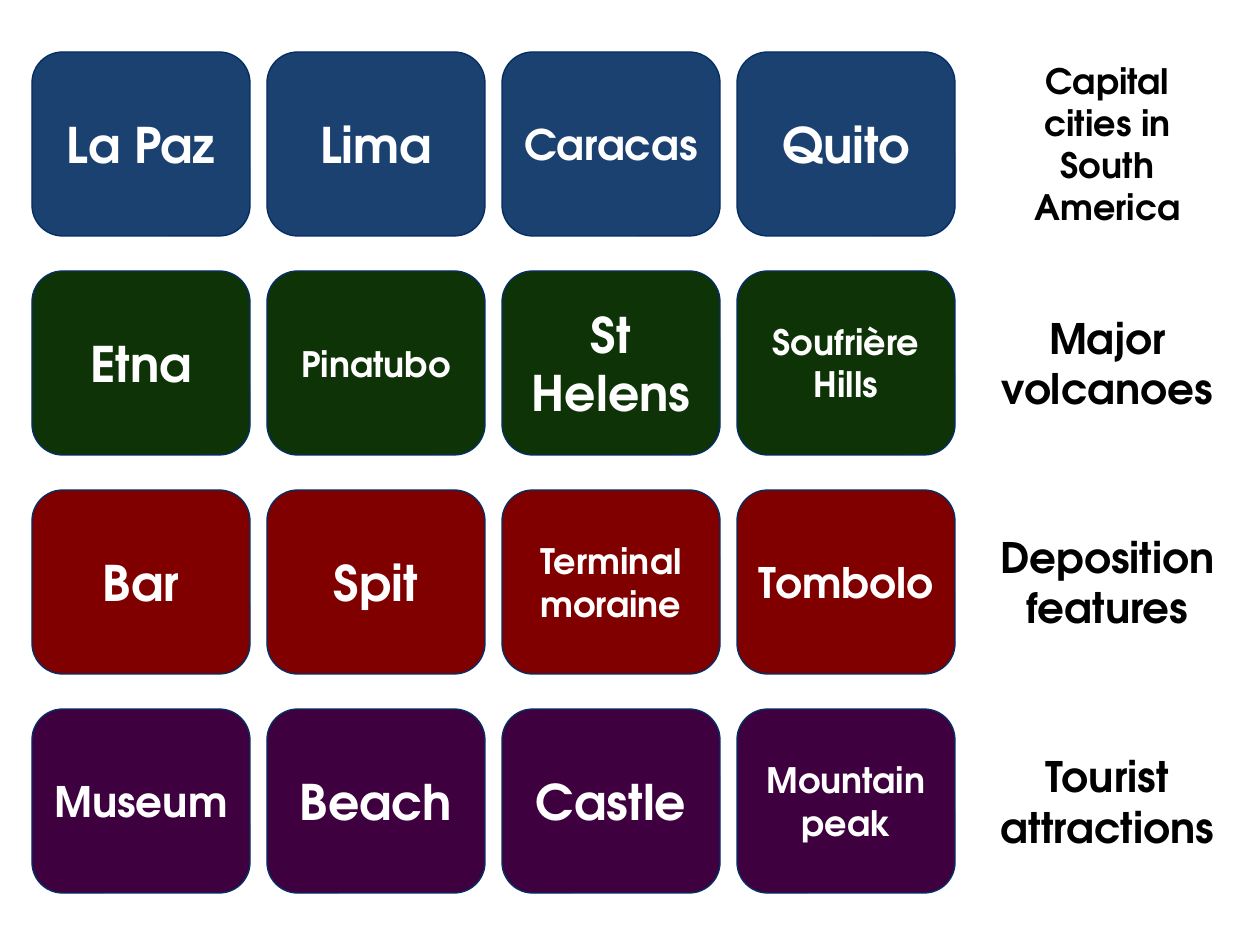
from pptx import Presentation
from pptx.dml.color import RGBColor
from pptx.enum.shapes import MSO_SHAPE
from pptx.enum.text import MSO_ANCHOR, PP_ALIGN
from pptx.util import Pt

ROUNDED = MSO_SHAPE.ROUNDED_RECTANGLE
MIDDLE = MSO_ANCHOR.MIDDLE
CENTER = PP_ALIGN.CENTER

EMU_PER_PX = 914400 / 126
COLORS = {
    "blue": "1B4171",
    "green": "0E3306",
    "red": "800000",
    "purple": "3F003F",
    "border": "052E65",
    "white": "FFFFFF",
    "black": "000000",
}

LEFT, TOP = 32, 52
CARD_W, CARD_H = 218, 184
COL_STEP, ROW_STEP = 235, 219
LABEL_LEFT, LABEL_W = 977, 261

GROUPS = [
    ("blue", [("La Paz", 28), ("Lima", 28), ("Caracas", 24), ("Quito", 28)],
     ("Capital cities in South America", 20)),
    ("green", [("Etna", 28), ("Pinatubo", 20), ("St Helens", 28), ("Soufrière Hills", 20)],
     ("Major volcanoes", 24)),
    ("red", [("Bar", 28), ("Spit", 28), ("Terminal moraine", 20), ("Tombolo", 24)],
     ("Deposition features", 24)),
    ("purple", [("Museum", 24), ("Beach", 28), ("Castle", 28), ("Mountain peak", 20)],
     ("Tourist attractions", 24)),
]


def px(n):
    return round(n * EMU_PER_PX)


def rgb(name):
    return RGBColor.from_string(COLORS[name])


class Board:
    font = "TeX Gyre Adventor"
    line_width = Pt(0.79)
    inset = px(12)

    def __init__(self, slide):
        self.s = slide

    def box(self, x, y, w, text, size, color):
        sp = self.s.shapes.add_shape(ROUNDED, px(x), px(y), px(w), px(CARD_H))
        sp.shadow.inherit = False
        tf = sp.text_frame
        tf.word_wrap = True
        tf.vertical_anchor = MIDDLE
        tf.margin_left = tf.margin_right = self.inset
        p = tf.paragraphs[0]
        p.text = text
        p.alignment = CENTER
        p.font.name = self.font
        p.font.size = Pt(size)
        p.font.bold = True
        p.font.color.rgb = rgb(color)
        return sp

    def card(self, x, y, text, size, fill):
        sp = self.box(x, y, CARD_W, text, size, "white")
        sp.fill.solid()
        sp.fill.fore_color.rgb = rgb(fill)
        sp.line.color.rgb = rgb("border")
        sp.line.width = self.line_width

    def label(self, x, y, text, size):
        sp = self.box(x, y, LABEL_W, text, size, "black")
        sp.fill.background()
        sp.line.fill.background()


def main():
    prs = Presentation()
    prs.slide_width, prs.slide_height = px(1260), px(945)
    board = Board(prs.slides.add_slide(prs.slide_layouts[6]))
    for row, (fill, cards, label) in enumerate(GROUPS):
        y = TOP + row * ROW_STEP
        for col, (text, size) in enumerate(cards):
            board.card(LEFT + col * COL_STEP, y, text, size, fill)
        board.label(LABEL_LEFT, y, *label)
    prs.save("out.pptx")


if __name__ == "__main__":
    main()
